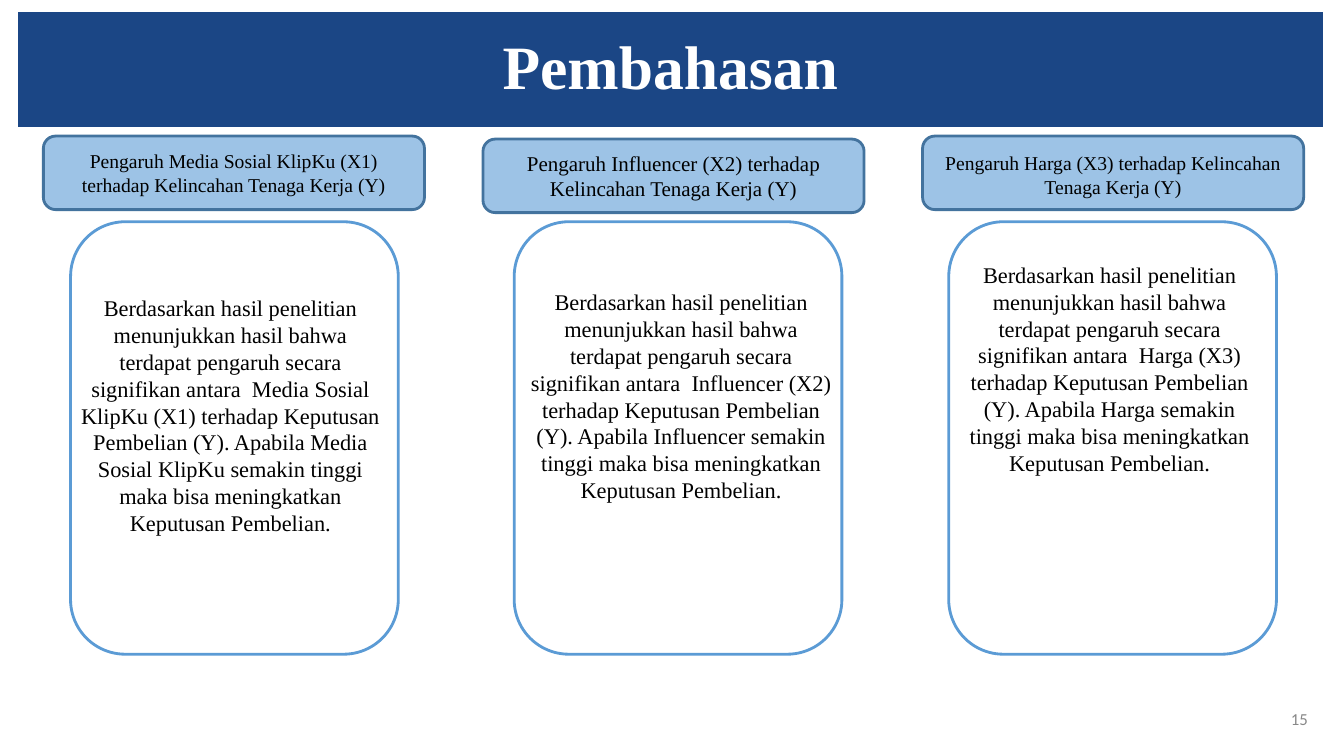
from pptx import Presentation
from pptx.dml.color import RGBColor
from pptx.enum import shapes, text
from pptx.util import Inches, Pt

NAVY = RGBColor(0x1B, 0x46, 0x85)
SKY = RGBColor(0x9D, 0xC3, 0xE6)
STEEL = RGBColor(0x43, 0x73, 0x9E)
BLUE = RGBColor(0x5B, 0x9B, 0xD5)
GREY = RGBColor(0x88, 0x88, 0x88)
WHITE = RGBColor(0xFF, 0xFF, 0xFF)
BLACK = RGBColor(0, 0, 0)
SERIF = "Times New Roman"

HEADING = "Pengaruh {0} ({1}) terhadap Kelincahan Tenaga Kerja (Y)"
FINDING = ("Berdasarkan hasil penelitian menunjukkan hasil bahwa terdapat "
           "pengaruh secara signifikan antara  {0} ({1}) terhadap Keputusan "
           "Pembelian (Y). Apabila {0} semakin tinggi maka bisa meningkatkan "
           "Keputusan Pembelian.")

# name, code, heading top, heading size, heading inset, card offset, text offset, text top
COLUMNS = [
    ("Media Sosial KlipKu", "X1", 1.35, 14, 0.05, 0.27, 0.23, 2.87),
    ("Influencer", "X2", 1.38, 15, 0.05, 0.31, 0.34, 2.81),
    ("Harga", "X3", 1.35, 14, 0.09, 0.26, 0.23, 2.54),
]


def write(sp, words, size, color, font=SERIF, align=text.PP_ALIGN.CENTER):
    """Put one formatted paragraph in a shape and return it."""
    tf = sp.text_frame
    tf.word_wrap = True
    tf.text = words
    p = tf.paragraphs[0]
    p.alignment = align
    p.font.name, p.font.size = font, Pt(size)
    p.font.color.rgb = color
    return p


def add_panel(slide, kind, x, y, w, h, fill, line):
    """Add a filled and outlined preset shape."""
    sp = slide.shapes.add_shape(kind, Inches(x), Inches(y), Inches(w), Inches(h))
    sp.shadow.inherit = False
    sp.fill.solid()
    sp.fill.fore_color.rgb = fill
    sp.line.color.rgb = line
    sp.line.width = Pt(2)
    return sp


def add_banner(slide, x, y, w, h):
    """Turn the title placeholder into the navy banner."""
    sp = slide.shapes.title
    sp.left, sp.top, sp.width, sp.height = map(Inches, (x, y, w, h))
    sp.fill.solid()
    sp.fill.fore_color.rgb = NAVY
    p = write(sp, "Pembahasan", 44, WHITE)
    p.font.bold = True
    p.line_spacing = 0.9
    sp.text_frame.vertical_anchor = text.MSO_ANCHOR.MIDDLE


def add_column(slide, x, column):
    """Add one variable's heading, card and finding from the left edge x."""
    name, code, top, size, inset, card_dx, text_dx, text_top = column
    kinds = shapes.MSO_SHAPE
    sp = add_panel(slide, kinds.FLOWCHART_ALTERNATE_PROCESS,
                   x, top, 3.78, 0.73, SKY, STEEL)
    write(sp, HEADING.format(name, code), size, BLACK)
    sp.text_frame.margin_top = Inches(inset)
    sp.text_frame.vertical_anchor = text.MSO_ANCHOR.MIDDLE
    add_panel(slide, kinds.ROUNDED_RECTANGLE,
              x + card_dx, 2.2, 3.25, 4.29, WHITE, BLUE)
    sp = slide.shapes.add_textbox(Inches(x + text_dx), Inches(text_top),
                                  Inches(3.25), Inches(2.5))
    write(sp, FINDING.format(name, code), 16, BLACK)


def add_page_number(slide, x, y, w, h):
    """Add the grey page number."""
    sp = slide.shapes.add_textbox(Inches(x), Inches(y), Inches(w), Inches(h))
    write(sp, "15", 12, GREY, "Calibri", text.PP_ALIGN.RIGHT)
    sp.text_frame.vertical_anchor = text.MSO_ANCHOR.MIDDLE


def main():
    """Build and save the slide."""
    prs = Presentation()
    prs.slide_width, prs.slide_height = Inches(13.33), Inches(7.5)
    slide = prs.slides.add_slide(prs.slide_layouts[5])
    add_banner(slide, 0.18, 0.12, 12.94, 1.14)
    for i, column in enumerate(COLUMNS):
        add_column(slide, 0.43 + 4.36 * i, column)
    add_page_number(slide, 12.5, 6.93, 0.57, 0.4)
    prs.save("out.pptx")


if __name__ == "__main__":
    main()
